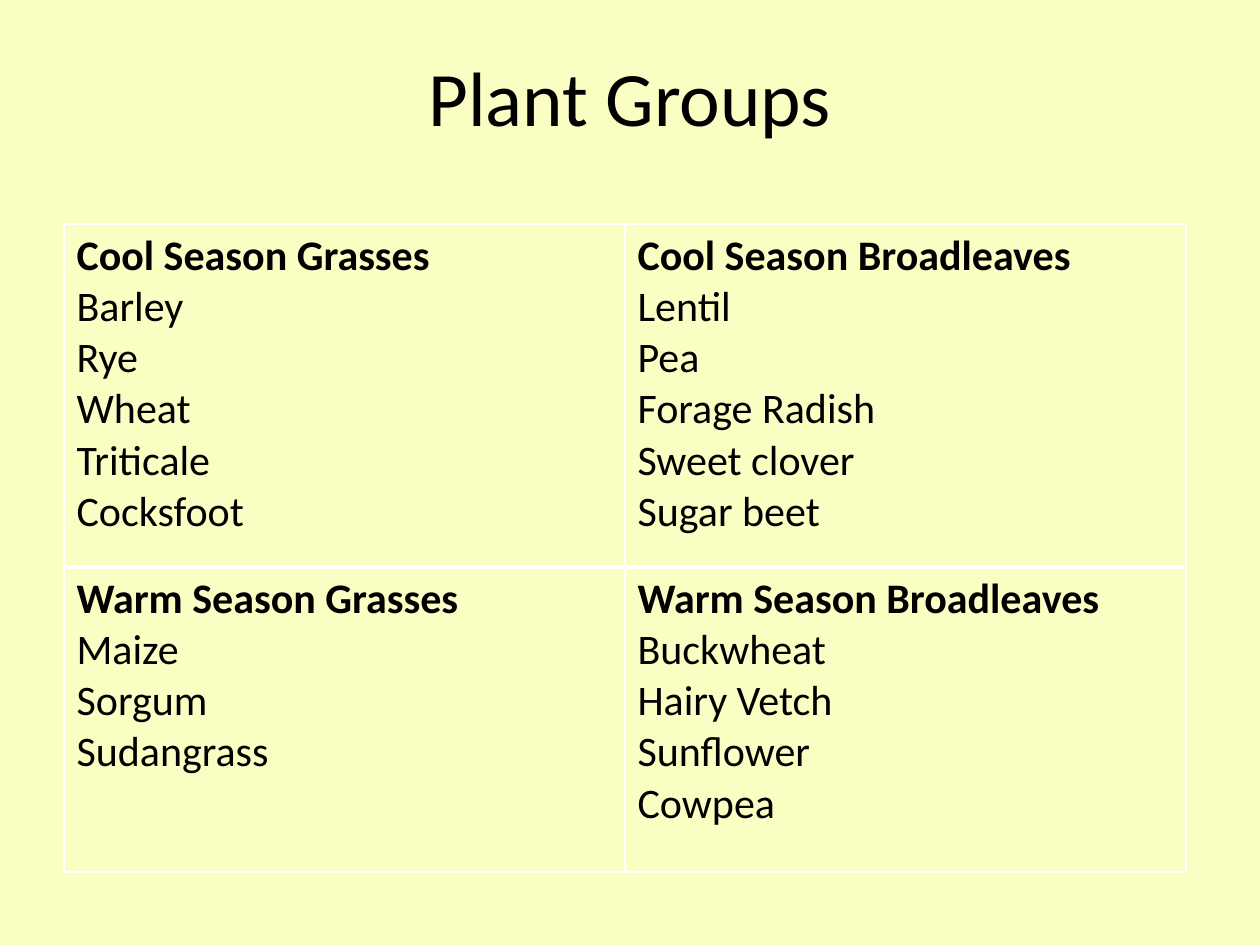
from pptx import Presentation
from pptx.util import Emu, Pt
from pptx.dml.color import RGBColor as RGB
from pptx.enum.text import PP_ALIGN as Align, MSO_ANCHOR as Anchor
from pptx.oxml import parse_xml
from pptx.oxml.ns import nsdecls

THEME = dict(font="Calibri", paper="FAFEC2", ink="000000", line="FFFFFF",
             title=44, body=24, thin=1, thick=3)

GROUPS = [
    [["Cool Season Grasses", "Barley", "Rye", "Wheat", "Triticale", "Cocksfoot"],
     ["Cool Season Broadleaves", "Lentil", "Pea", "Forage Radish",
      "Sweet clover", "Sugar beet"]],
    [["Warm Season Grasses", "Maize", "Sorgum", "Sudangrass"],
     ["Warm Season Broadleaves", "Buckwheat", "Hairy Vetch", "Sunflower",
      "Cowpea"]],
]
COL_WIDTH = 561
ROW_HEIGHTS = [343, 305]


def px(n):
    return Emu(round(n * 914400 / 126))


def style(p, size, bold=False):
    for r in p.runs:
        r.font.name = THEME["font"]
        r.font.size = Pt(size)
        r.font.bold = bold
        r.font.color.rgb = RGB.from_string(THEME["ink"])


prs = Presentation()
prs.slide_width, prs.slide_height = px(1260), px(945)
s = prs.slides.add_slide(prs.slide_layouts[6])
s.background.fill.solid()
s.background.fill.fore_color.rgb = RGB.from_string(THEME["paper"])

# Table of plant groups
table = s.shapes.add_table(2, 2, px(64), px(224), px(2 * COL_WIDTH),
                           px(sum(ROW_HEIGHTS))).table
table.first_row = table.horz_banding = False
for col in table.columns:
    col.width = px(COL_WIDTH)
for i, row in enumerate(GROUPS):
    table.rows[i].height = px(ROW_HEIGHTS[i])
    for j, lines in enumerate(row):
        cell = table.cell(i, j)
        tf = cell.text_frame
        tf.text = "\n".join(lines)
        for k, p in enumerate(tf.paragraphs):
            style(p, THEME["body"], bold=k == 0)

        # The rule between the seasons is thicker than the rest
        middle = "B" if i == 0 else "T"
        tcPr = cell._tc.get_or_add_tcPr()
        for side in "LRTB":
            width = Pt(THEME["thick" if side == middle else "thin"])
            tcPr.append(parse_xml(
                f'<a:ln{side} {nsdecls("a")} w="{width}"><a:solidFill>'
                f'<a:srgbClr val="{THEME["line"]}"/></a:solidFill></a:ln{side}>'))
        cell.fill.background()

# Title
sp = s.shapes.add_textbox(px(63), px(38), px(1134), px(157))
tf = sp.text_frame
tf.word_wrap = True
tf.vertical_anchor = Anchor.TOP
tf.margin_top = px(11)
tf.text = "Plant Groups"
p = tf.paragraphs[0]
p.alignment = Align.CENTER
style(p, THEME["title"])

prs.save("out.pptx")
